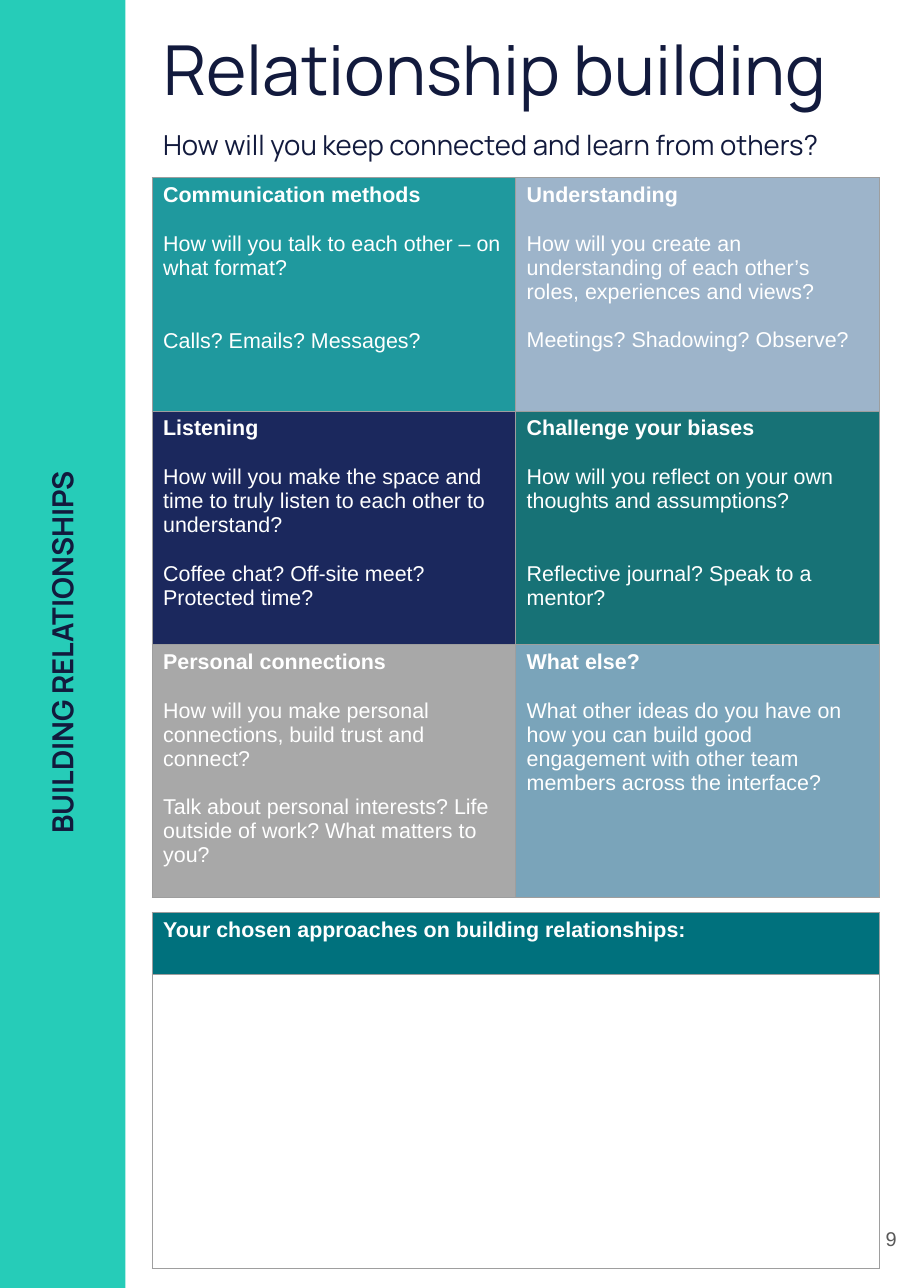
from dataclasses import dataclass

from lxml.etree import SubElement
from pptx import Presentation
from pptx.dml.color import RGBColor
from pptx.enum.shapes import MSO_SHAPE
from pptx.enum.text import MSO_ANCHOR, MSO_AUTO_SIZE, PP_ALIGN
from pptx.oxml import parse_xml
from pptx.oxml.ns import nsdecls, qn
from pptx.util import Pt

NAVY, WHITE, GREY = "121A3D", "FFFFFF", "9E9E9E"
LINE = 16  # height of one 14 pt line
TABLE_LEFT, TABLE_WIDTH = 99.4, 475.2


@dataclass
class Box:
    left: float
    top: float
    width: float
    height: float

    def emu(self) -> tuple:
        return Pt(self.left), Pt(self.top), Pt(self.width), Pt(self.height)


@dataclass
class Topic:
    heading: str
    fill: str
    question: str
    prompt: str = ""
    gap: int = 1  # blank lines between question and prompt


TOPICS = [
    Topic("Communication methods", "1F999E",
          "How will you talk to each other – on what format?",
          "Calls? Emails? Messages?", 2),
    Topic("Understanding", "9DB4CA",
          "How will you create an understanding of each other’s roles, experiences and views?",
          "Meetings? Shadowing? Observe?"),
    Topic("Listening", "1B285D",
          "How will you make the space and time to truly listen to each other to understand?",
          "Coffee chat? Off-site meet? Protected time?"),
    Topic("Challenge your biases", "177276",
          "How will you reflect on your own thoughts and assumptions?",
          "Reflective journal? Speak to a mentor?", 2),
    Topic("Personal connections", "A8A8A8",
          "How will you make personal connections, build trust and connect?",
          "Talk about personal interests? Life outside of work? What matters to you?"),
    Topic("What else?", "7AA4BA",
          "What other ideas do you have on how you can build good engagement "
          "with other team members across the interface?"),
]


def rgb(value: str) -> RGBColor:
    return RGBColor.from_string(value)


def add_run(p, text: str, size: float, color: str, font: str = "Arial",
            bold: bool = False) -> None:
    r = p.add_run()
    r.text = text
    r.font.name, r.font.size, r.font.bold = font, Pt(size), bold
    r.font.color.rgb = rgb(color)


def set_frame(tf, inset: float, anchor: MSO_ANCHOR) -> None:
    tf.word_wrap, tf.auto_size = True, MSO_AUTO_SIZE.NONE
    tf.vertical_anchor = anchor
    tf.margin_left = tf.margin_right = tf.margin_top = tf.margin_bottom = Pt(inset)


def fill_placeholder(sp, box: Box, text: str, size: float) -> None:
    sp.left, sp.top, sp.width, sp.height = box.emu()
    set_frame(sp.text_frame, 0, MSO_ANCHOR.TOP)
    p = sp.text_frame.paragraphs[0]
    p.alignment, p.space_before = PP_ALIGN.LEFT, Pt(0)
    add_run(p, text, size, NAVY, "Manrope")
    pPr = p._p.get_or_add_pPr()
    pPr.set("marL", "0")
    pPr.set("indent", "0")
    SubElement(pPr, qn("a:buNone"))


def add_label(slide, box: Box, text: str, size: float, color: str, font: str,
              align: PP_ALIGN, inset: float, bold: bool = False):
    sp = slide.shapes.add_textbox(*box.emu())
    set_frame(sp.text_frame, inset, MSO_ANCHOR.MIDDLE)
    p = sp.text_frame.paragraphs[0]
    p.alignment = align
    add_run(p, text, size, color, font, bold)
    return sp


def add_grid(slide, top: float, columns: int, heights: list[float]):
    box = Box(TABLE_LEFT, top, TABLE_WIDTH, sum(heights))
    table = slide.shapes.add_table(len(heights), columns, *box.emu()).table
    table.first_row = table.horz_banding = False
    for row, height in zip(table.rows, heights):
        row.height = Pt(height)
    for cell in table.iter_cells():
        cell.fill.background()
        tcPr = cell._tc.get_or_add_tcPr()
        for i, side in enumerate("LRTB"):
            tcPr.insert(i, parse_xml(
                f'<a:ln{side} {nsdecls("a")} w="{Pt(0.75)}"><a:solidFill>'
                f'<a:srgbClr val="{GREY}"/></a:solidFill></a:ln{side}>'))
    return table


def paint(cell, color: str) -> None:
    cell.fill.solid()
    cell.fill.fore_color.rgb = rgb(color)


def fill_topic(cell, topic: Topic) -> None:
    paint(cell, topic.fill)
    tf = cell.text_frame
    p = tf.paragraphs[0]
    add_run(p, topic.heading, 14, WHITE, bold=True)
    for text, gap in ((topic.question, 1), (topic.prompt, topic.gap)):
        if text:
            p = tf.add_paragraph()
            p.space_before = Pt(gap * LINE)
            add_run(p, text, 14, WHITE)


def main() -> None:
    prs = Presentation()
    prs.slide_width, prs.slide_height = Pt(595.4), Pt(841.7)
    s = prs.slides.add_slide(prs.slide_layouts[1])

    # Side band
    band = s.shapes.add_shape(MSO_SHAPE.RECTANGLE, *Box(0, 0, 82, 841.7).emu())
    band.shadow.inherit = False
    band.fill.solid()
    band.fill.fore_color.rgb = rgb("26CCB8")
    band.line.fill.background()
    section = add_label(s, Box(-159.7, 407.5, 400, 37.4), "BUILDING RELATIONSHIPS",
                        19, NAVY, "Manrope", PP_ALIGN.CENTER, 7.2, True)
    section.rotation = 270

    # Title and subtitle
    fill_placeholder(s.shapes.title, Box(106.6, 17.6, 478, 62),
                     "Relationship building", 45)
    fill_placeholder(s.placeholders[1], Box(106.6, 83.6, 478, 26),
                     "How will you keep connected and learn from others?", 18)

    # Topic grid
    grid = add_grid(s, 116, 2, [152.6, 152.6, 165.6])
    for cell, topic in zip(grid.iter_cells(), TOPICS):
        fill_topic(cell, topic)

    # Answer area
    answer = add_grid(s, 596.2, 1, [40.6, 192])
    header = answer.cell(0, 0)
    paint(header, "00717D")
    add_run(header.text_frame.paragraphs[0],
            "Your chosen approaches on building relationships:", 14, WHITE, bold=True)

    # Page number
    add_label(s, Box(559.4, 777.6, 36, 64), "9", 13, "595959", "Arial",
              PP_ALIGN.RIGHT, 9.4)

    prs.save("out.pptx")


if __name__ == "__main__":
    main()
